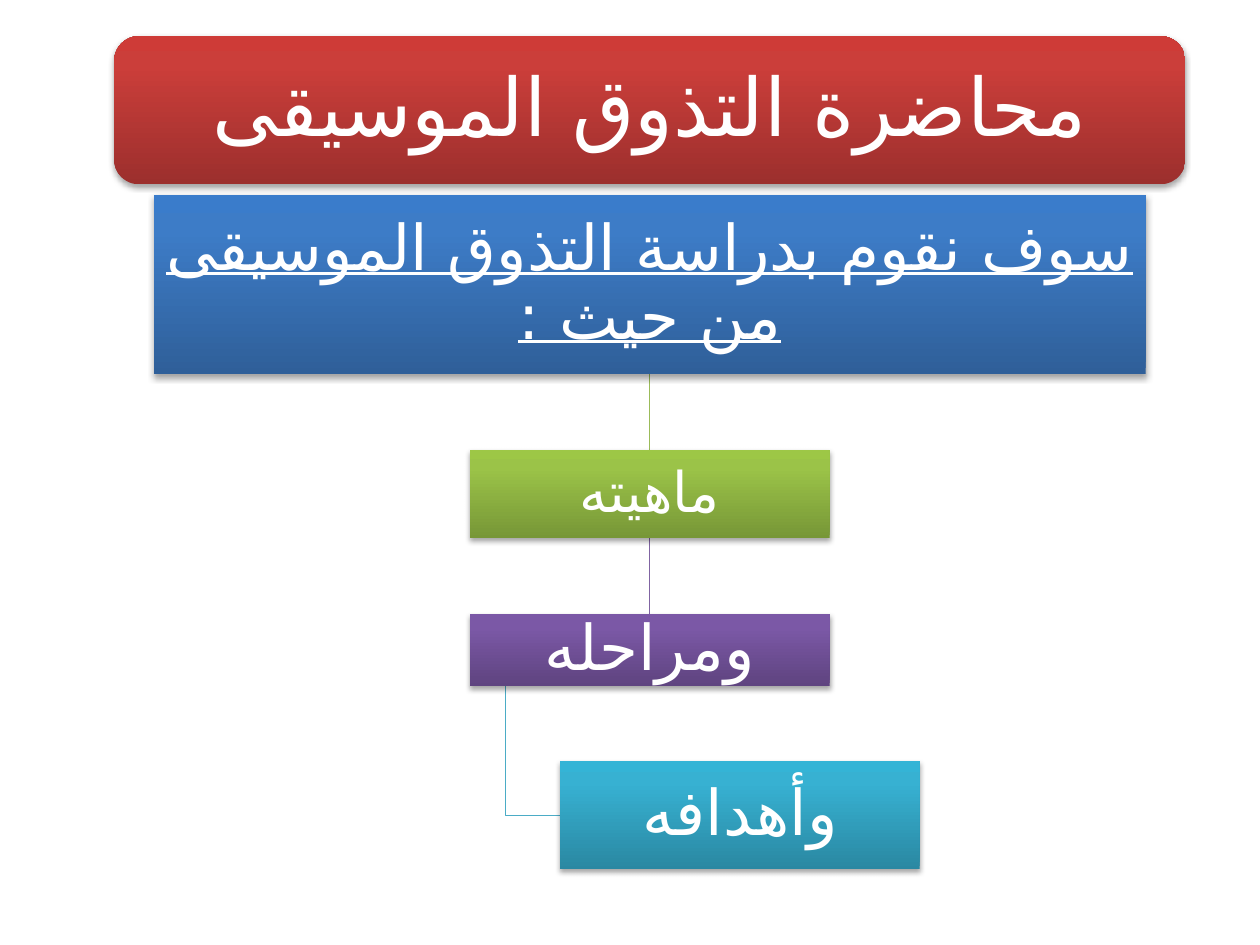
from copy import deepcopy

from pptx import Presentation
from pptx.dml.color import RGBColor
from pptx.enum import shapes, text
from pptx.oxml import parse_xml
from pptx.oxml.ns import nsdecls, qn
from pptx.util import Pt

FONT = "Calibri"
ARABIC_FONT = "DejaVu Sans"
WHITE = RGBColor(0xFF, 0xFF, 0xFF)
GREEN_LINE = RGBColor(0x9B, 0xBB, 0x59)
PURPLE_LINE = RGBColor(0x80, 0x64, 0xA2)
TEAL_LINE = RGBColor(0x4B, 0xAC, 0xC6)

# Gradients run from the bottom edge to the top edge
STOPS = (0, 0.8, 1)
RED = [RGBColor.from_string(c) for c in ("9C2F2D", "CB3E3A", "CE3B37")]
BLUE = [RGBColor.from_string(c) for c in ("2F5F99", "3D7CC7", "3A7CCB")]
GREEN = [RGBColor.from_string(c) for c in ("779737", "9BC348", "9DC746")]
PURPLE = [RGBColor.from_string(c) for c in ("5F4480", "7B58A6", "7C57A8")]
TEAL = [RGBColor.from_string(c) for c in ("2A88A2", "37B1D2", "34B4D6")]

# Content
TITLE = "محاضرة التذوق الموسيقى"
# wording, gradient, width, height, font size, inset, underline, shift in widths
LEVELS = [
    ("سوف نقوم بدراسة التذوق الموسيقى من حيث :", BLUE, 566.8, 102.8, 36, 1.8, True, 0),
    ("ماهيته", GREEN, 205.7, 50.3, 32, 1.6, False, 0),
    ("ومراحله", PURPLE, 205.7, 41.1, 36, 1.8, False, 0),
    ("وأهدافه", TEAL, 205.7, 61.7, 36, 1.8, False, 0.25),
]
LINE_COLORS = [GREEN_LINE, PURPLE_LINE, TEAL_LINE]

# Layout
CENTER = 371.3
TREE_TOP = 111.2
GAP = 43.2

presentation = Presentation()
presentation.slide_width, presentation.slide_height = Pt(720), Pt(540)
slide = presentation.slides.add_slide(presentation.slide_layouts[6])


def add_box(kind, wording, colors, left, top, width, height, size, inset, underline=False):
    shape = slide.shapes.add_shape(kind, Pt(left), Pt(top), Pt(width), Pt(height))
    shape.line.fill.background()

    # Three-stop gradient
    shape.fill.gradient()
    shape.fill.gradient_angle = 90
    stop_list = shape.fill.gradient_stops[0]._gs.getparent()
    stop_list.append(deepcopy(stop_list[-1]))
    for stop, position, color in zip(shape.fill.gradient_stops, STOPS, colors):
        stop.position = position
        stop.color.rgb = color

    # Soft shadow below
    shape.shadow.inherit = False
    shape._element.spPr.find(qn("a:effectLst")).append(parse_xml(
        f'<a:outerShdw {nsdecls("a")} blurRad="{Pt(3.1)}" dist="{Pt(1.8)}" dir="5400000" '
        'rotWithShape="0"><a:srgbClr val="000000"><a:alpha val="35000"/></a:srgbClr></a:outerShdw>'))

    # Right-to-left wording
    frame = shape.text_frame
    frame.text = wording
    frame.word_wrap = True
    frame.vertical_anchor = text.MSO_ANCHOR.MIDDLE
    frame.margin_left = frame.margin_right = frame.margin_top = frame.margin_bottom = Pt(inset)
    paragraph = frame.paragraphs[0]
    paragraph.alignment = text.PP_ALIGN.CENTER
    paragraph.line_spacing = 0.9
    paragraph._p.get_or_add_pPr().set("rtl", "1")
    font = paragraph.runs[0].font
    font.name, font.size, font.color.rgb = FONT, Pt(size), WHITE
    if underline:
        font.underline = True
    font._element.set("lang", "ar-EG")
    font._element.append(parse_xml(f'<a:cs {nsdecls("a")} typeface="{ARABIC_FONT}"/>'))


def style_line(line_shape, color):
    line_shape.line.color.rgb = color
    line_shape.line.width = Pt(0.75)


# Tree positions, stacked with equal gaps
boxes = []
top = TREE_TOP
for _, _, width, height, *_, shift in LEVELS:
    boxes.append((CENTER - width / 2 + shift * width, top, width, height))
    top += height + GAP

# Title
add_box(shapes.MSO_SHAPE.ROUNDED_RECTANGLE, TITLE, RED, 65.3, 20.7, 612, 84.6, 46, 17.3)

# Links between levels: an elbow to the shifted box, straight lines elsewhere
for parent, child, color, level in zip(boxes, boxes[1:], LINE_COLORS, LEVELS[1:]):
    bottom = parent[1] + parent[3]
    if level[-1]:
        x = parent[0] + parent[2] / 10
        middle = child[1] + child[3] / 2
        builder = slide.shapes.build_freeform(Pt(x), Pt(bottom))
        builder.add_line_segments([(Pt(x), Pt(middle)), (Pt(child[0]), Pt(middle))], close=False)
        link = builder.convert_to_shape()
        link.fill.background()
        link.shadow.inherit = False
    else:
        link = slide.shapes.add_connector(
            shapes.MSO_CONNECTOR.STRAIGHT, Pt(CENTER), Pt(bottom), Pt(CENTER), Pt(child[1]))
        link._element.spPr.append(parse_xml(f'<a:effectLst {nsdecls("a")}/>'))
    style_line(link, color)

# Level boxes
for box, (wording, colors, _, _, size, inset, underline, _) in zip(boxes, LEVELS):
    add_box(shapes.MSO_SHAPE.RECTANGLE, wording, colors, *box, size, inset, underline)

presentation.save("out.pptx")
